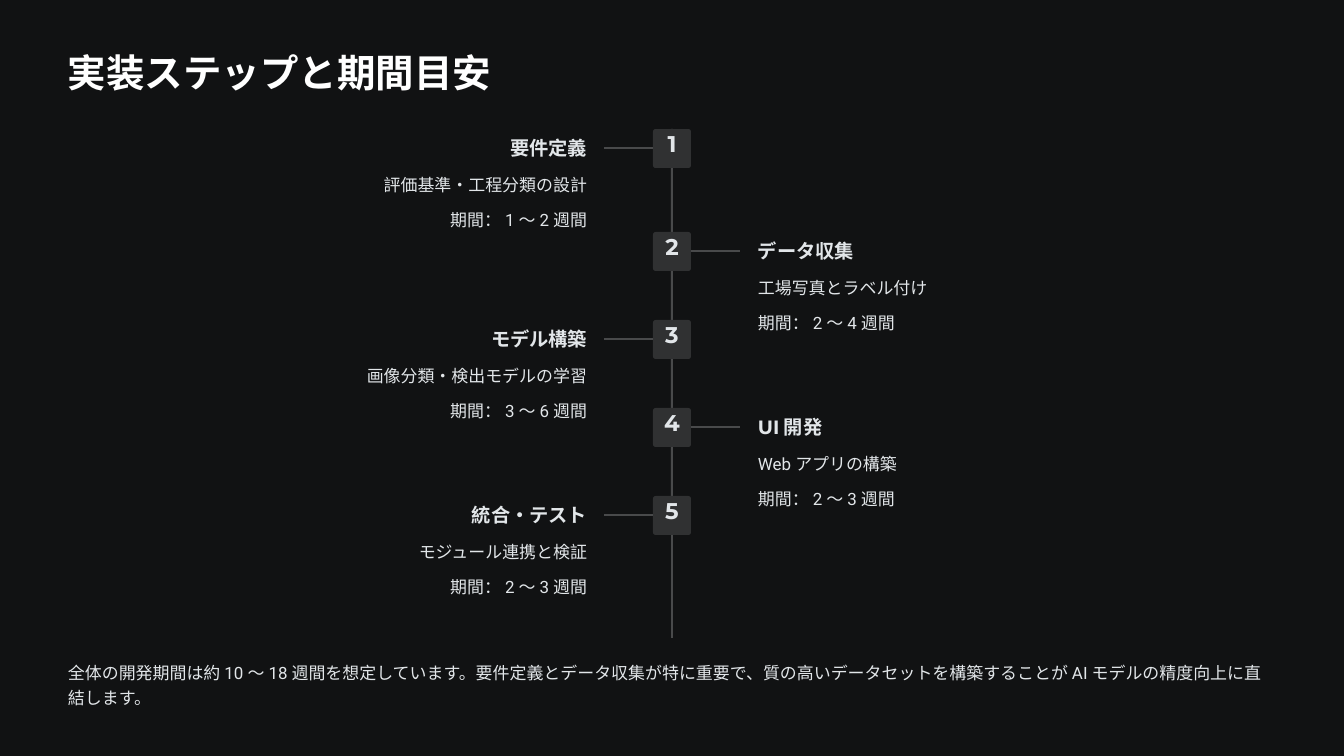
from pptx import Presentation
from pptx.dml.color import RGBColor
from pptx.enum.shapes import MSO_CONNECTOR, MSO_SHAPE
from pptx.enum.text import MSO_ANCHOR, MSO_AUTO_SIZE, PP_ALIGN
from pptx.oxml.ns import qn
from pptx.util import Emu, Pt
from lxml import etree

# Content: top of the number box in px, heading, task, duration
TITLE = "実装ステップと期間目安"
STEPS = [
    (129, "要件定義", "評価基準・工程分類の設計", "期間：1〜2週間"),
    (232, "データ収集", "工場写真とラベル付け", "期間：2〜4週間"),
    (320, "モデル構築", "画像分類・検出モデルの学習", "期間：3〜6週間"),
    (408, "UI開発", "Webアプリの構築", "期間：2〜3週間"),
    (496, "統合・テスト", "モジュール連携と検証", "期間：2〜3週間"),
]
SUMMARY = ("全体の開発期間は約10〜18週間を想定しています。要件定義とデータ収集が特に重要で、"
           "質の高いデータセットを構築することがAIモデルの精度向上に直結します。")

# Style
BACKGROUND = RGBColor(0x11, 0x12, 0x13)
WHITE = RGBColor(0xFF, 0xFF, 0xFF)
TEXT = RGBColor(0xE2, 0xE6, 0xE9)
LINE = RGBColor(0x49, 0x4A, 0x4B)
BOX = RGBColor(0x30, 0x31, 0x32)
HEAD_FONT, BODY_FONT = "Montserrat", "Roboto"
LEFT, CENTER, RIGHT = PP_ALIGN.LEFT, PP_ALIGN.CENTER, PP_ALIGN.RIGHT
STRAIGHT, ROUNDED = MSO_CONNECTOR.STRAIGHT, MSO_SHAPE.ROUNDED_RECTANGLE
TOP, NO_FIT = MSO_ANCHOR.TOP, MSO_AUTO_SIZE.NONE

# Layout in px
SLIDE_W, SLIDE_H = 1344, 756
MARGIN = 68
AXIS_X, AXIS_END = SLIDE_W // 2, 638
BOX_W, BOX_H = 38, 39
BRANCH = 49
TEXT_GAP, TEXT_W, TEXT_H = 85, 519, 96


def px(n):
    return Emu(round(n * 914400 / 84))


def set_frame(tf, wrap=True, inset_top=0):
    tf.auto_size = NO_FIT
    tf.word_wrap = wrap
    tf.vertical_anchor = TOP
    tf.margin_left = tf.margin_right = tf.margin_bottom = 0
    tf.margin_top = px(inset_top)


def set_paragraph(p, text, size, spacing, font=BODY_FONT, color=TEXT,
                  bold=False, align=LEFT, before=0):
    p.text = text
    p.alignment = align
    p.line_spacing = Pt(spacing)
    p.space_before = Pt(before)
    p.font.name = font
    p.font.size = Pt(size)
    p.font.bold = bold
    p.font.color.rgb = color


def add_line(x1, y1, x2, y2):
    line = s.shapes.add_connector(STRAIGHT, px(x1), px(y1), px(x2), px(y2))
    line.line.color.rgb = LINE
    line.line.width = px(2)
    etree.SubElement(line._element.spPr, qn("a:effectLst"))
    return line


prs = Presentation()
prs.slide_width, prs.slide_height = px(SLIDE_W), px(SLIDE_H)
s = prs.slides.add_slide(prs.slide_layouts[5])
s.background.fill.solid()
s.background.fill.fore_color.rgb = BACKGROUND

# Title
title = s.shapes.title
title.left, title.top, title.width, title.height = px(MARGIN), px(47), px(426), px(49)
set_frame(title.text_frame, wrap=False)
set_paragraph(title.text_frame.paragraphs[0], TITLE, 33, 41.5, HEAD_FONT, WHITE, True)

# Timeline axis, behind the number boxes
axis = add_line(AXIS_X, STEPS[0][0], AXIS_X, AXIS_END)

# Steps, alternating left and right of the axis
for i, (top, heading, task, duration) in enumerate(STEPS):
    on_left = i % 2 == 0
    side = -1 if on_left else 1

    # Number box
    box = s.shapes.add_shape(ROUNDED, px(AXIS_X - BOX_W / 2), px(top), px(BOX_W), px(BOX_H))
    box.adjustments[0] = 0.07
    box.shadow.inherit = False
    box.fill.solid()
    box.fill.fore_color.rgb = BOX
    box.line.fill.background()
    set_frame(box.text_frame, inset_top=5)
    set_paragraph(box.text_frame.paragraphs[0], str(i + 1), 19.5, 19.5,
                  HEAD_FONT, bold=True, align=CENTER)
    if i == 0:
        axis.begin_connect(box, 0)

    # Branch line
    start, mid = AXIS_X + side * BOX_W / 2, top + BOX_H / 2
    branch = add_line(start, mid, start + side * BRANCH, mid)
    branch.begin_connect(box, 1 if on_left else 3)

    # Step text
    x = AXIS_X - TEXT_GAP - TEXT_W if on_left else AXIS_X + TEXT_GAP + 1
    align = RIGHT if on_left else LEFT
    tf = s.shapes.add_textbox(px(x), px(top + 6), px(TEXT_W), px(TEXT_H)).text_frame
    set_frame(tf)
    set_paragraph(tf.paragraphs[0], heading, 16.5, 20.5, HEAD_FONT, bold=True, align=align)
    for text in (task, duration):
        set_paragraph(tf.add_paragraph(), text, 14.5, 21.5, align=align, before=9)

# Summary
tf = s.shapes.add_textbox(px(MARGIN), px(658), px(SLIDE_W - 2 * MARGIN), px(51)).text_frame
set_frame(tf)
set_paragraph(tf.paragraphs[0], SUMMARY, 14.5, 21.5)

prs.save("out.pptx")
